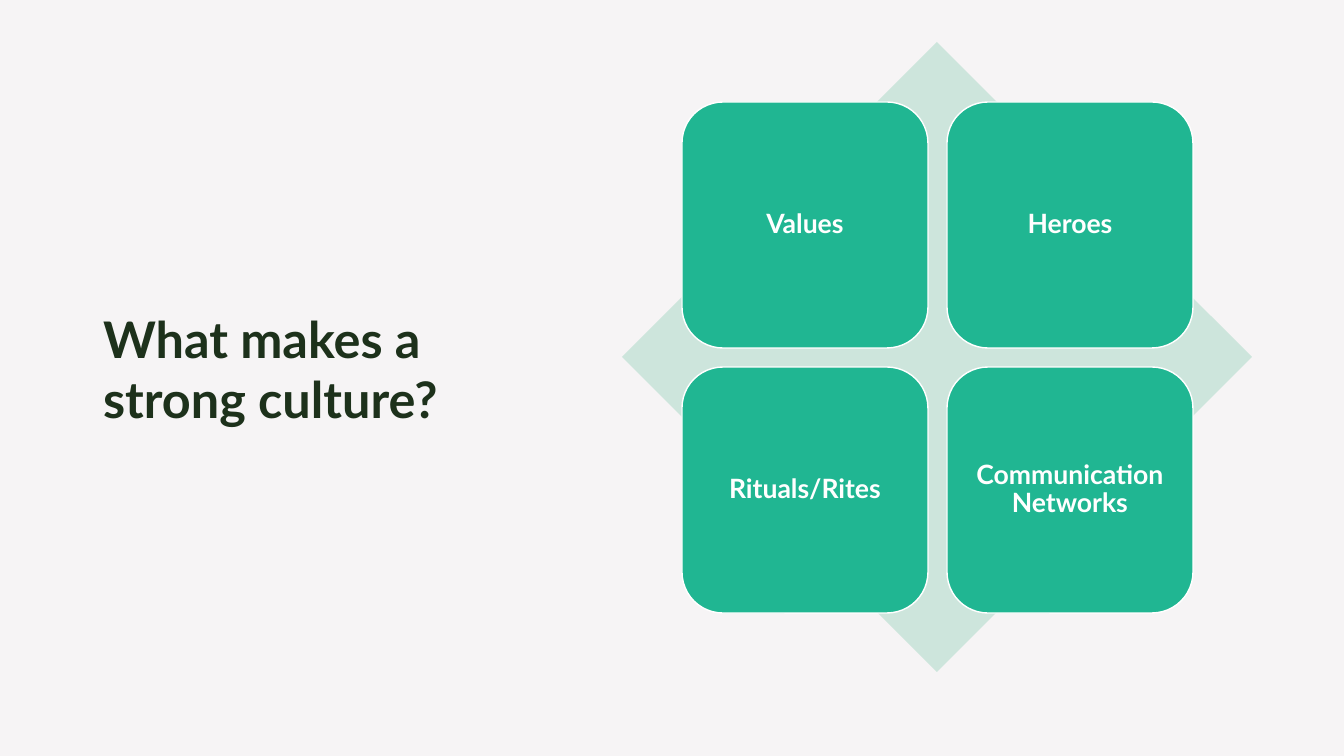
from dataclasses import dataclass

from pptx import Presentation
from pptx.dml.color import RGBColor
from pptx.enum.shapes import MSO_SHAPE as Shape
from pptx.enum.text import MSO_ANCHOR as Anchor, MSO_AUTO_SIZE as AutoSize, PP_ALIGN as Align
from pptx.slide import Slide
from pptx.text.text import TextFrame
from pptx.util import Emu, Pt

BACKGROUND = RGBColor(0xF6, 0xF4, 0xF5)
DARK_GREEN = RGBColor(0x1D, 0x31, 0x1B)
PALE_GREEN = RGBColor(0xCD, 0xE5, 0xDC)
GREEN = RGBColor(0x20, 0xB6, 0x92)
WHITE = RGBColor(0xFF, 0xFF, 0xFF)

TITLE_ONLY = 5
TILE_SIZE = 246
TILE_PITCH = 265
TILES_LEFT, TILES_TOP = 682, 102


@dataclass(frozen=True)
class Tile:
    label: str
    column: int
    row: int


TILES = [
    Tile("Values", 0, 0),
    Tile("Heroes", 1, 0),
    Tile("Rituals/Rites", 0, 1),
    Tile("Communication Networks", 1, 1),
]


def px(length: int) -> Emu:
    """Convert pixels, at 100.8 to the inch, into EMU."""
    return Emu(round(length * 914400 / 100.8))


def apply(target: object, values: dict[str, object]) -> None:
    """Set each named attribute on the target."""
    for name, value in values.items():
        setattr(target, name, value)


def write(frame: TextFrame, text: str, size: int, color: RGBColor, align: Align, spacing: float) -> None:
    frame.text = text
    apply(frame, {"word_wrap": True, "auto_size": AutoSize.NONE, "vertical_anchor": Anchor.MIDDLE})
    paragraph = frame.paragraphs[0]
    apply(paragraph, {"alignment": align, "line_spacing": spacing})
    apply(paragraph.font, {"name": "Lato", "size": Pt(size), "bold": True})
    paragraph.font.color.rgb = color


def add_title(slide: Slide) -> None:
    title = slide.shapes.title
    apply(title, {"left": px(93), "top": px(61), "width": px(484), "height": px(615)})
    write(title.text_frame, "What makes a strong culture?", 36, DARK_GREEN, Align.LEFT, 1.0)


def add_diamond(slide: Slide) -> None:
    diamond = slide.shapes.add_shape(Shape.DIAMOND, px(622), px(42), px(630), px(630))
    diamond.shadow.inherit = False
    diamond.fill.solid()
    diamond.fill.fore_color.rgb = PALE_GREEN
    diamond.line.fill.background()


def add_tile(slide: Slide, tile: Tile) -> None:
    left = px(TILES_LEFT + tile.column * TILE_PITCH)
    top = px(TILES_TOP + tile.row * TILE_PITCH)
    shape = slide.shapes.add_shape(Shape.ROUNDED_RECTANGLE, left, top, px(TILE_SIZE), px(TILE_SIZE))
    shape.shadow.inherit = False
    shape.fill.solid()
    shape.fill.fore_color.rgb = GREEN
    shape.line.color.rgb = WHITE
    shape.line.width = Pt(1)
    sides = ("left", "top", "right", "bottom")
    apply(shape.text_frame, {f"margin_{side}": px(8) for side in sides})
    write(shape.text_frame, tile.label, 19, WHITE, Align.CENTER, 0.9)


def main() -> None:
    presentation = Presentation()
    apply(presentation, {"slide_width": px(1344), "slide_height": px(756)})
    slide = presentation.slides.add_slide(presentation.slide_layouts[TITLE_ONLY])
    slide.background.fill.solid()
    slide.background.fill.fore_color.rgb = BACKGROUND
    add_title(slide)
    add_diamond(slide)
    for tile in TILES:
        add_tile(slide, tile)
    presentation.save("out.pptx")


if __name__ == "__main__":
    main()
